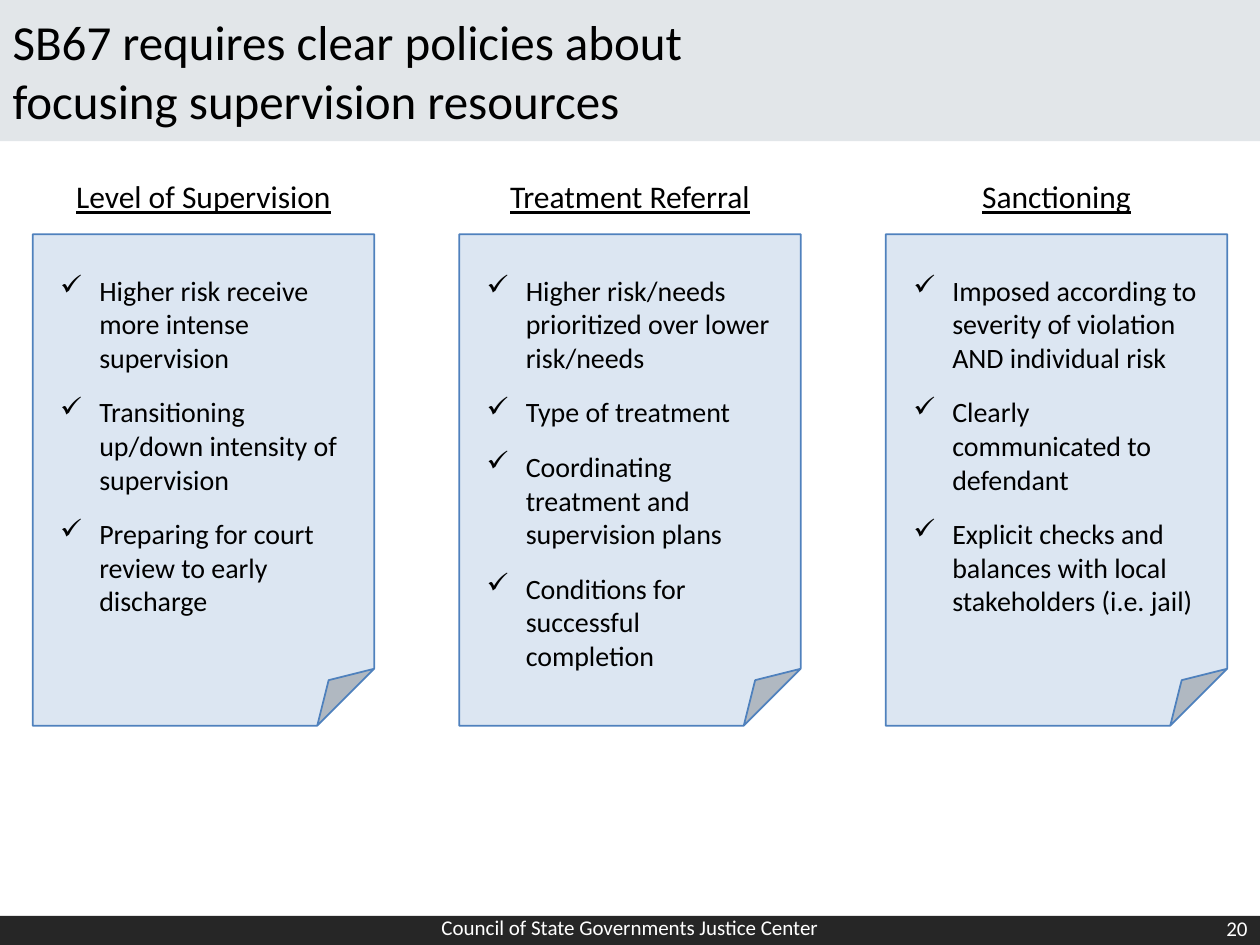
from lxml.etree import SubElement
from pptx import Presentation
from pptx.dml.color import RGBColor
from pptx.enum.shapes import MSO_SHAPE
from pptx.enum.text import MSO_ANCHOR, MSO_AUTO_SIZE, PP_ALIGN
from pptx.oxml.ns import qn
from pptx.util import Inches, Pt

TITLE = "SB67 requires clear policies about\vfocusing supervision resources"
COLUMNS = [
    ("Level of Supervision", [
        "Higher risk receive more intense supervision",
        "Transitioning up/down intensity of supervision",
        "Preparing for court review to early discharge",
    ]),
    ("Treatment Referral", [
        "Higher risk/needs prioritized over lower risk/needs",
        "Type of treatment",
        "Coordinating treatment and supervision plans",
        "Conditions for successful completion",
    ]),
    ("Sanctioning", [
        "Imposed according to severity of violation AND individual risk",
        "Clearly communicated to defendant",
        "Explicit checks and balances with local stakeholders (i.e. jail)",
    ]),
]
FOOTER = "Council of State Governments Justice Center"
PAGE_NUMBER = "20"

BLACK = RGBColor(0x00, 0x00, 0x00)
WHITE = RGBColor(0xFF, 0xFF, 0xFF)
BAND_GRAY = RGBColor(0xE2, 0xE6, 0xE9)
FOOTER_GRAY = RGBColor(0x26, 0x26, 0x26)
NOTE_BLUE = RGBColor(0xDC, 0xE6, 0xF2)
LINE_BLUE = RGBColor(0x4F, 0x81, 0xBD)

PAGE_WIDTH, PAGE_HEIGHT = 10, 7.5
NOTE_WIDTH, NOTE_HEIGHT, NOTE_TOP = 2.71, 3.9, 1.86
MARGIN = 0.26
COLUMN_STEP = (PAGE_WIDTH - 2 * MARGIN - NOTE_WIDTH) / (len(COLUMNS) - 1)
LIST_INSET, LIST_WIDTH, LIST_TOP = 0.12, 2.47, 2.12
BULLET_INDENT = 0.31


def style_font(font, size, color=BLACK, **extra):
    values = {"name": "Calibri", "size": Pt(size), **extra}
    for name, value in values.items():
        setattr(font, name, value)
    font.color.rgb = color


def add_panel(page, kind, area, fill, line=None):
    panel = page.shapes.add_shape(kind, *map(Inches, area))
    panel.shadow.inherit = False
    panel.fill.solid()
    panel.fill.fore_color.rgb = fill
    if line is None:
        panel.line.fill.background()
    else:
        panel.line.color.rgb = line
        panel.line.width = Pt(1)


def add_text(page, area, lines, size, color=BLACK, align=PP_ALIGN.LEFT,
             anchor=MSO_ANCHOR.TOP, bulleted=False, **extra):
    frame = page.shapes.add_textbox(*map(Inches, area)).text_frame
    frame.word_wrap = True
    frame.vertical_anchor = anchor
    if anchor == MSO_ANCHOR.TOP:
        frame.auto_size = MSO_AUTO_SIZE.SHAPE_TO_FIT_TEXT
    frame.text = "\n".join(lines)
    for para in frame.paragraphs:
        para.alignment = align
        if bulleted:
            para.space_after = Pt(12)
            add_check_bullet(para)
        for span in para.runs:
            style_font(span.font, size, color, **extra)


def add_check_bullet(para):
    properties = para._p.get_or_add_pPr()
    properties.set("marL", str(Inches(BULLET_INDENT)))
    properties.set("indent", str(-Inches(BULLET_INDENT)))
    SubElement(properties, qn("a:buChar")).set("char", "✓")


def add_title(page):
    title = page.shapes.title
    area = {"left": 0, "top": 0, "width": PAGE_WIDTH, "height": 1.12}
    for name, value in area.items():
        setattr(title, name, Inches(value))
    title.fill.solid()
    title.fill.fore_color.rgb = BAND_GRAY
    frame = title.text_frame
    frame.text = TITLE
    frame.vertical_anchor = MSO_ANCHOR.MIDDLE
    frame.auto_size = MSO_AUTO_SIZE.NONE
    para = frame.paragraphs[0]
    para.alignment = PP_ALIGN.LEFT
    for span in para.runs:
        style_font(span.font, 28)


def add_footer(page):
    add_panel(page, MSO_SHAPE.RECTANGLE, (0, 7.27, PAGE_WIDTH, 0.23), FOOTER_GRAY)
    add_text(page, (7.67, 7.17, 2.33, 0.4), [PAGE_NUMBER], 12, WHITE,
             PP_ALIGN.RIGHT, MSO_ANCHOR.MIDDLE)
    add_text(page, (3.22, 7.15, 3.56, 0.42), [FOOTER], 12, WHITE,
             PP_ALIGN.CENTER, MSO_ANCHOR.MIDDLE)


def main():
    deck = Presentation()
    deck.slide_width, deck.slide_height = Inches(PAGE_WIDTH), Inches(PAGE_HEIGHT)
    page = deck.slides.add_slide(deck.slide_layouts.get_by_name("Title Only"))
    add_title(page)
    add_footer(page)
    for index, (heading, points) in enumerate(COLUMNS):
        left = MARGIN + index * COLUMN_STEP
        add_panel(page, MSO_SHAPE.FOLDED_CORNER,
                  (left, NOTE_TOP, NOTE_WIDTH, NOTE_HEIGHT), NOTE_BLUE, LINE_BLUE)
        add_text(page, (left, 1.36, NOTE_WIDTH, 0.4), [heading], 18,
                 align=PP_ALIGN.CENTER, underline=True)
        list_height = 3.3 if len(points) > 3 else 2.86
        add_text(page, (left + LIST_INSET, LIST_TOP, LIST_WIDTH, list_height),
                 points, 16, bulleted=True)
    deck.save("out.pptx")


if __name__ == "__main__":
    main()
